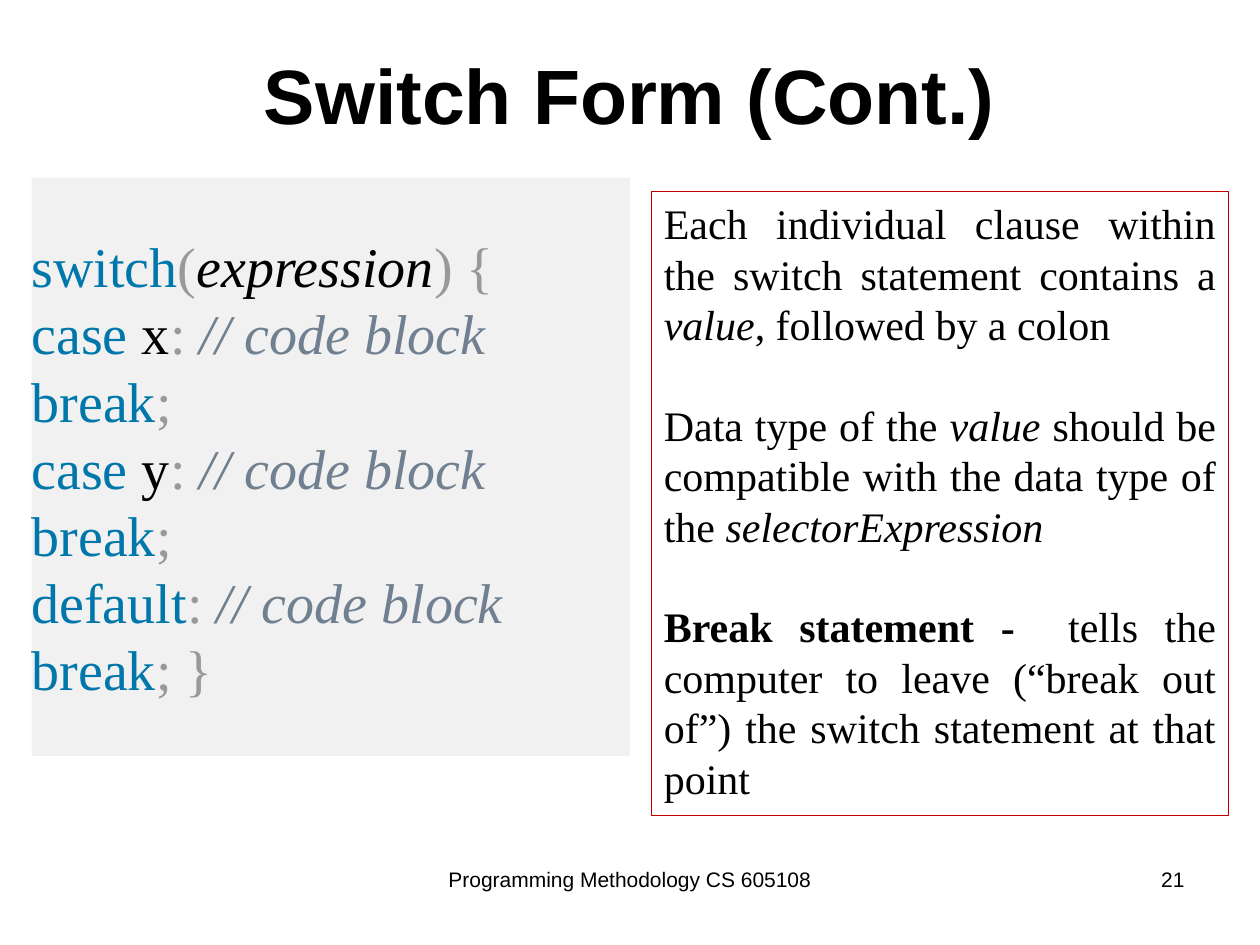
from pptx import Presentation
from pptx.dml.color import RGBColor
from pptx.enum.shapes import MSO_SHAPE
from pptx.enum.text import MSO_ANCHOR as Anchor, PP_ALIGN as Align
from pptx.util import Inches, Pt

BLACK = RGBColor(0x00, 0x00, 0x00)
KEYWORD = RGBColor(0x00, 0x77, 0xAA)
PUNCTUATION = RGBColor(0x99, 0x99, 0x99)
COMMENT = RGBColor(0x70, 0x80, 0x90)
CODE_FILL = RGBColor(0xF1, 0xF1, 0xF1)
NOTE_LINE = RGBColor(0xC0, 0x00, 0x00)
SANS, SERIF = "Arial", "Times New Roman"
LINE_PITCH = 1.2


def add_span(para, text, size, font=SERIF, color=BLACK, bold=False, italic=False):
    span = para.add_run()
    span.text = text
    span.font.name = font
    span.font.size = Pt(size)
    span.font.color.rgb = color
    span.font.bold = bold
    span.font.italic = italic


def add_paras(frame, count, align, size):
    """Return count paragraphs with the same alignment and line pitch."""
    paras = [frame.paragraphs[0]] + [frame.add_paragraph() for _ in range(count - 1)]
    for para in paras:
        para.alignment = align
        para.line_spacing = Pt(size * LINE_PITCH)
    return paras


def add_panel(page, bounds, anchor):
    panel = page.shapes.add_shape(MSO_SHAPE.RECTANGLE, *map(Inches, bounds))
    panel.shadow.inherit = False
    panel.text_frame.word_wrap = True
    panel.text_frame.vertical_anchor = anchor
    return panel


def place_title(page, bounds):
    title = page.shapes.title
    title.left, title.top, title.width, title.height = map(Inches, bounds)
    title.text_frame.vertical_anchor = Anchor.MIDDLE
    para = title.text_frame.paragraphs[0]
    para.alignment = Align.CENTER
    add_span(para, "Switch Form (Cont.)", 44, SANS, bold=True)


def place_code(page, bounds):
    panel = add_panel(page, bounds, Anchor.MIDDLE)
    panel.fill.solid()
    panel.fill.fore_color.rgb = CODE_FILL
    panel.line.fill.background()
    frame = panel.text_frame
    frame.margin_left = frame.margin_right = 0
    frame.margin_top = frame.margin_bottom = Inches(0.17)

    # Each branch: keyword, label, closing punctuation
    branches = [("case", " x", ";"), ("case", " y", ";"), ("default", "", "; }")]
    lines = [[("switch", KEYWORD), ("(", PUNCTUATION),
              ("expression", BLACK, True), (") {", PUNCTUATION)]]
    for keyword, label, ending in branches:
        lines.append([(keyword, KEYWORD), (label, BLACK), (": ", PUNCTUATION),
                      ("// code block ", COMMENT, True),
                      ("break", KEYWORD), (ending, PUNCTUATION)])

    for para, line in zip(add_paras(frame, len(lines), Align.LEFT, 32), lines):
        for text, color, *italic in line:
            if text:
                add_span(para, text, 32, color=color, italic=bool(italic))


def place_notes(page, bounds):
    panel = add_panel(page, bounds, Anchor.TOP)
    panel.fill.background()
    panel.line.color.rgb = NOTE_LINE
    panel.line.width = Pt(0.75)

    notes = [
        [("Each individual clause within the switch statement contains a ", ""),
         ("value", "italic"), (", followed by a colon", "")],
        [("Data type of the ", ""), ("value ", "italic"),
         ("should be compatible with the data type of the ", ""),
         ("selectorExpression", "italic")],
        [("Break statement - ", "bold"),
         (" tells the computer to leave (“break out of”) "
          "the switch statement at that point", "")],
    ]
    paras = add_paras(panel.text_frame, len(notes), Align.JUSTIFY, 24)
    for para, note in zip(paras, notes):
        for text, style in note:
            add_span(para, text, 24, bold=style == "bold", italic=style == "italic")
    # One line of space between the notes
    for para in paras[:-1]:
        para.space_after = Pt(24 * LINE_PITCH)


def place_footer(page, bounds, text, align):
    box = page.shapes.add_textbox(*map(Inches, bounds))
    box.text_frame.word_wrap = True
    para = box.text_frame.paragraphs[0]
    para.alignment = align
    add_span(para, text, 12, SANS)


def main():
    deck = Presentation()
    deck.slide_width, deck.slide_height = Inches(10), Inches(7.5)
    page = deck.slides.add_slide(deck.slide_layouts[5])

    # Footer and page number
    place_footer(page, (3.25, 6.83, 3.5, 0.52),
                 "Programming Methodology CS 605108", Align.CENTER)
    place_footer(page, (7.17, 6.83, 2.33, 0.52), "21", Align.RIGHT)

    # Title, code on the left, notes on the right
    place_title(page, (0.5, 0.33, 9, 0.83))
    place_code(page, (0.25, 1.41, 4.75, 4.59))
    place_notes(page, (5.17, 1.52, 4.58, 4.95))

    deck.save("out.pptx")


if __name__ == "__main__":
    main()
